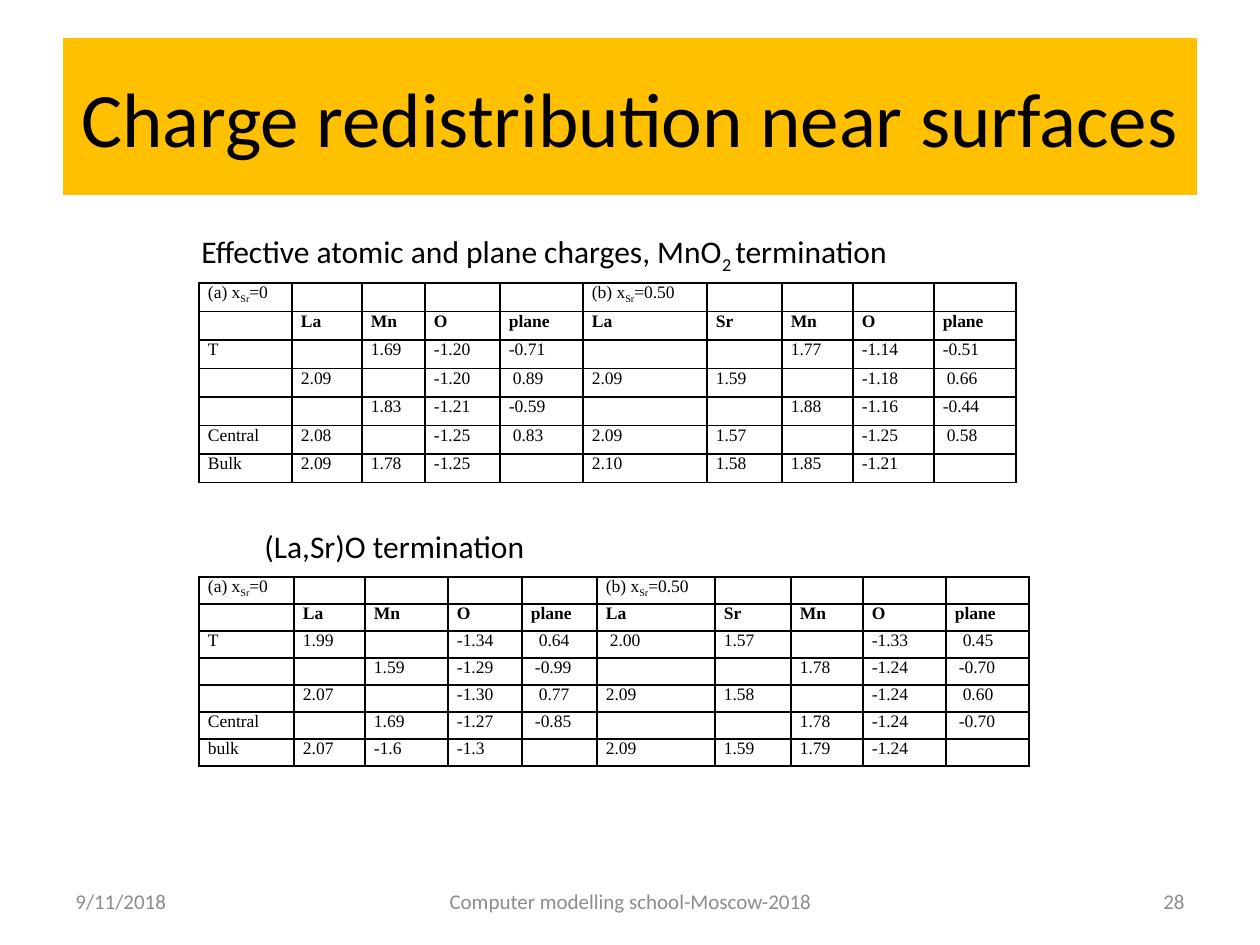
from lxml.etree import SubElement
from pptx import Presentation
from pptx.dml.color import RGBColor
from pptx.enum.text import MSO_ANCHOR, MSO_AUTO_SIZE, PP_ALIGN
from pptx.oxml.ns import qn
from pptx.util import Emu, Pt

EMU_PER_PX = 914400 / 126
SPACE_PX = 4

SURFACE_MNO2 = """(a) x~Sr~=0|||||(b) x~Sr~=0.50||||
|La|Mn|O|plane|La|Sr|Mn|O|plane
T||1.69|-1.20|-0.71|||1.77|-1.14|-0.51
|2.09||-1.20| 0.89|2.09|1.59||-1.18| 0.66
||1.83|-1.21|-0.59|||1.88|-1.16|-0.44
Central|2.08||-1.25| 0.83|2.09|1.57||-1.25| 0.58
Bulk|2.09|1.78|-1.25||2.10|1.58|1.85|-1.21|"""

SURFACE_LASRO = """(a) x~Sr~=0|||||(b) x~Sr~=0.50||||
|La|Mn|O|plane|La|Sr|Mn|O|plane
T|1.99||-1.34|  0.64| 2.00|1.57||-1.33|  0.45
||1.59|-1.29| -0.99|||1.78|-1.24| -0.70
|2.07||-1.30|  0.77|2.09|1.58||-1.24|  0.60
Central||1.69|-1.27| -0.85|||1.78|-1.24| -0.70
bulk|2.07|-1.6|-1.3||2.09|1.59|1.79|-1.24|"""


def px(length):
    return Emu(round(length * EMU_PER_PX))


def color(value):
    return RGBColor.from_string(value)


def apply(target, values):
    for name, value in values.items():
        setattr(target, name, value)


class SlideBuilder:
    body_font = "Calibri"
    table_font = "Times New Roman"
    ink = "000000"
    muted = "8C8C8C"
    banner = "FFC000"

    def __init__(self, deck):
        self.slide = deck.slides.add_slide(deck.slide_layouts[5])

    def add_spans(self, para, text, size, font=None, ink=None, bold=False, align=None):
        para.alignment = align
        for index, part in enumerate(text.split("~")):
            span = para.add_run()
            span.text = part
            apply(span.font, {"name": font or self.body_font, "size": Pt(size), "bold": bold})
            span.font.color.rgb = color(ink or self.ink)
            if index % 2:
                span._r.get_or_add_rPr().set("baseline", "-25000")

    def title(self, text, left, top, width, height):
        title = self.slide.shapes.title
        apply(title, {"left": px(left), "top": px(top), "width": px(width), "height": px(height)})
        title.fill.solid()
        title.fill.fore_color.rgb = color(self.banner)
        apply(title.text_frame, {"auto_size": MSO_AUTO_SIZE.NONE, "vertical_anchor": MSO_ANCHOR.MIDDLE})
        self.add_spans(title.text_frame.paragraphs[0], text, 44, align=PP_ALIGN.CENTER)

    def text(self, text, left, top, width, height, frame_format, **style):
        box = self.slide.shapes.add_textbox(px(left), px(top), px(width), px(height))
        apply(box.text_frame, frame_format)
        self.add_spans(box.text_frame.paragraphs[0], text, **style)

    def caption(self, text, left, top, width):
        frame_format = {"word_wrap": False, "auto_size": MSO_AUTO_SIZE.SHAPE_TO_FIT_TEXT}
        self.text(text, left, top, width, 50, frame_format, size=18)

    def footer(self, text, left, width, align):
        frame_format = {"word_wrap": True, "vertical_anchor": MSO_ANCHOR.MIDDLE}
        self.text(text, left, 876, width, 50, frame_format, size=12, ink=self.muted, align=align)

    def borders(self, cell):
        properties = cell._tc.get_or_add_tcPr()
        for side in ("lnL", "lnR", "lnT", "lnB"):
            line = SubElement(properties, qn(f"a:{side}"), w=str(Pt(1)))
            fill = SubElement(line, qn("a:solidFill"))
            SubElement(fill, qn("a:srgbClr"), val=self.ink)

    def fill_cell(self, cell, value, bold):
        text = value.lstrip()
        indent = (len(value) - len(text)) * SPACE_PX
        apply(cell, {"margin_left": px(9 + indent), "margin_right": px(9),
                     "margin_top": 0, "margin_bottom": 0})
        self.borders(cell)
        cell.fill.background()
        para = cell.text_frame.paragraphs[0]
        if text:
            self.add_spans(para, text, 10, self.table_font, bold=bold, align=PP_ALIGN.JUSTIFY)
        else:
            para._p.get_or_add_endParaRPr().set("sz", "1000")

    def table(self, data, left, top, height, widths):
        rows = [line.split("|") for line in data.splitlines()]
        frame = self.slide.shapes.add_table(
            len(rows), len(widths), px(left), px(top), px(sum(widths)), px(height))
        table = frame.table
        apply(table, {"first_row": False, "horz_banding": False})
        for column, width in zip(table.columns, widths):
            column.width = px(width)
        for row_index, values in enumerate(rows):
            table.rows[row_index].height = px(height / len(rows))
            for column_index, value in enumerate(values):
                self.fill_cell(table.cell(row_index, column_index), value, row_index == 1)


def main():
    deck = Presentation()
    apply(deck, {"slide_width": px(1260), "slide_height": px(945)})
    builder = SlideBuilder(deck)
    builder.title("Charge redistribution near surfaces", 63, 38, 1134, 157)
    builder.table(SURFACE_MNO2, 199, 283, 200, [93, 70, 63, 75, 83, 124, 75, 71, 81, 82])
    builder.footer("9/11/2018", 63, 294, PP_ALIGN.LEFT)
    builder.footer("Computer modelling school-Moscow-2018", 431, 399, PP_ALIGN.CENTER)
    builder.footer("28", 903, 294, PP_ALIGN.RIGHT)
    builder.table(SURFACE_LASRO, 199, 577, 189, [95, 71, 83, 74, 75, 118, 76, 72, 83, 83])
    builder.caption("Effective atomic and plane charges, MnO~2 ~termination", 189, 226, 737)
    builder.caption("(La,Sr)O termination", 252, 521, 289)
    deck.save("out.pptx")


if __name__ == "__main__":
    main()
